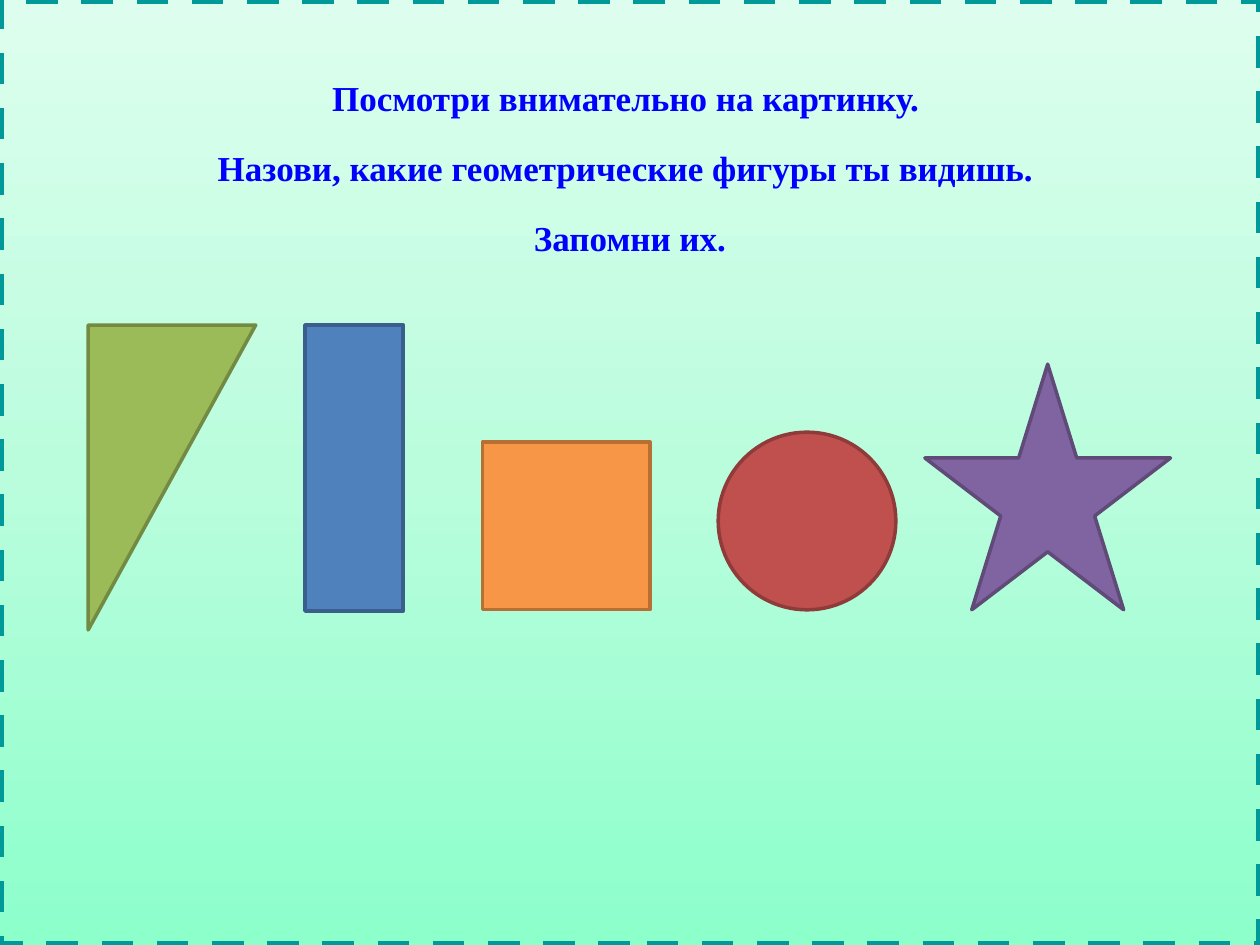
import copy

import pptx
import pptx.dml.color
import pptx.enum.dml
import pptx.enum.shapes
import pptx.enum.text
import pptx.util

Inches, Pt = pptx.util.Inches, pptx.util.Pt
KIND = pptx.enum.shapes.MSO_SHAPE
COLORS = {
    "text": "0000FF", "frame": "009999",
    "low": "8CFFCB", "mid": "BAFDDD", "high": "DDFEEE",
    "green": "9BBB59", "green edge": "738A42",
    "blue": "4F81BD", "blue edge": "3A5F8C",
    "orange": "F79646", "orange edge": "B76F34",
    "red": "C0504D", "red edge": "8E3B39",
    "purple": "8064A2", "purple edge": "5F4A78",
}
LINES = [
    "Посмотри внимательно на картинку. ",
    "Назови, какие геометрические фигуры ты видишь. ",
    "Запомни их.",
]
FIGURES = [
    (KIND.RIGHT_TRIANGLE, "green", 0.7, 2.58, 1.33, 2.42),
    (KIND.RECTANGLE, "blue", 2.42, 2.58, 0.78, 2.27),
    (KIND.RECTANGLE, "orange", 3.83, 3.51, 1.33, 1.33),
    (KIND.OVAL, "red", 5.7, 3.43, 1.41, 1.41),
    (KIND.STAR_5_POINT, "purple", 7.34, 2.89, 1.95, 1.95),
]


def color(name):
    return pptx.dml.color.RGBColor.from_string(COLORS[name])


class Board:
    """Holds the style and the current slide."""
    font, size = "Times New Roman", 20

    def __init__(self, deck):
        self.slide = deck.slides.add_slide(deck.slide_layouts[5])

    def edge(self, shape, name, width):
        shape.line.color.rgb = color(name)
        shape.line.width = Pt(width)

    def blend(self, shape, names):
        """Fill with an even upward gradient of three colours."""
        fill = shape.fill
        fill.gradient()
        fill.gradient_angle = 90
        first = shape.element.spPr.find(
            ".//" + pptx.oxml.ns.qn("a:gs"))
        first.addnext(copy.deepcopy(first))
        for i, (stop, name) in enumerate(zip(fill.gradient_stops, names)):
            stop.position = i / (len(names) - 1)
            stop.color.rgb = color(name)

    def title(self, lines):
        """Make the title a framed panel that covers the slide."""
        box = self.slide.shapes.title
        box.left = box.top = 0
        box.width, box.height = Inches(10), Inches(7.5)
        self.blend(box, ["low", "mid", "high"])
        self.edge(box, "frame", 4.5)
        box.line.dash_style = pptx.enum.dml.MSO_LINE.DASH
        frame = box.text_frame
        frame.text = "\n".join(lines)
        frame.word_wrap = True
        frame.auto_size = pptx.enum.text.MSO_AUTO_SIZE.NONE
        frame.vertical_anchor = pptx.enum.text.MSO_ANCHOR.TOP
        frame.margin_top = Inches(0.44)
        for i, para in enumerate(frame.paragraphs):
            para.alignment = pptx.enum.text.PP_ALIGN.CENTER
            para.line_spacing = 1.5
            para.space_before = Pt(4 if i else 0)
            font = para.runs[0].font
            font.name, font.size, font.bold = self.font, Pt(self.size), True
            font.color.rgb = color("text")

    def figure(self, kind, name, *place):
        shape = self.slide.shapes.add_shape(kind, *map(Inches, place))
        shape.shadow.inherit = False
        shape.fill.solid()
        shape.fill.fore_color.rgb = color(name)
        self.edge(shape, name + " edge", 2)
        return shape


def main():
    deck = pptx.Presentation()
    deck.slide_width, deck.slide_height = Inches(10), Inches(7.5)
    board = Board(deck)
    board.title(LINES)
    for item in FIGURES:
        shape = board.figure(*item)
        if item[0] == KIND.RIGHT_TRIANGLE:
            shape.element.spPr.xfrm.set("flipV", "1")
    deck.save("out.pptx")


if __name__ == "__main__":
    main()
